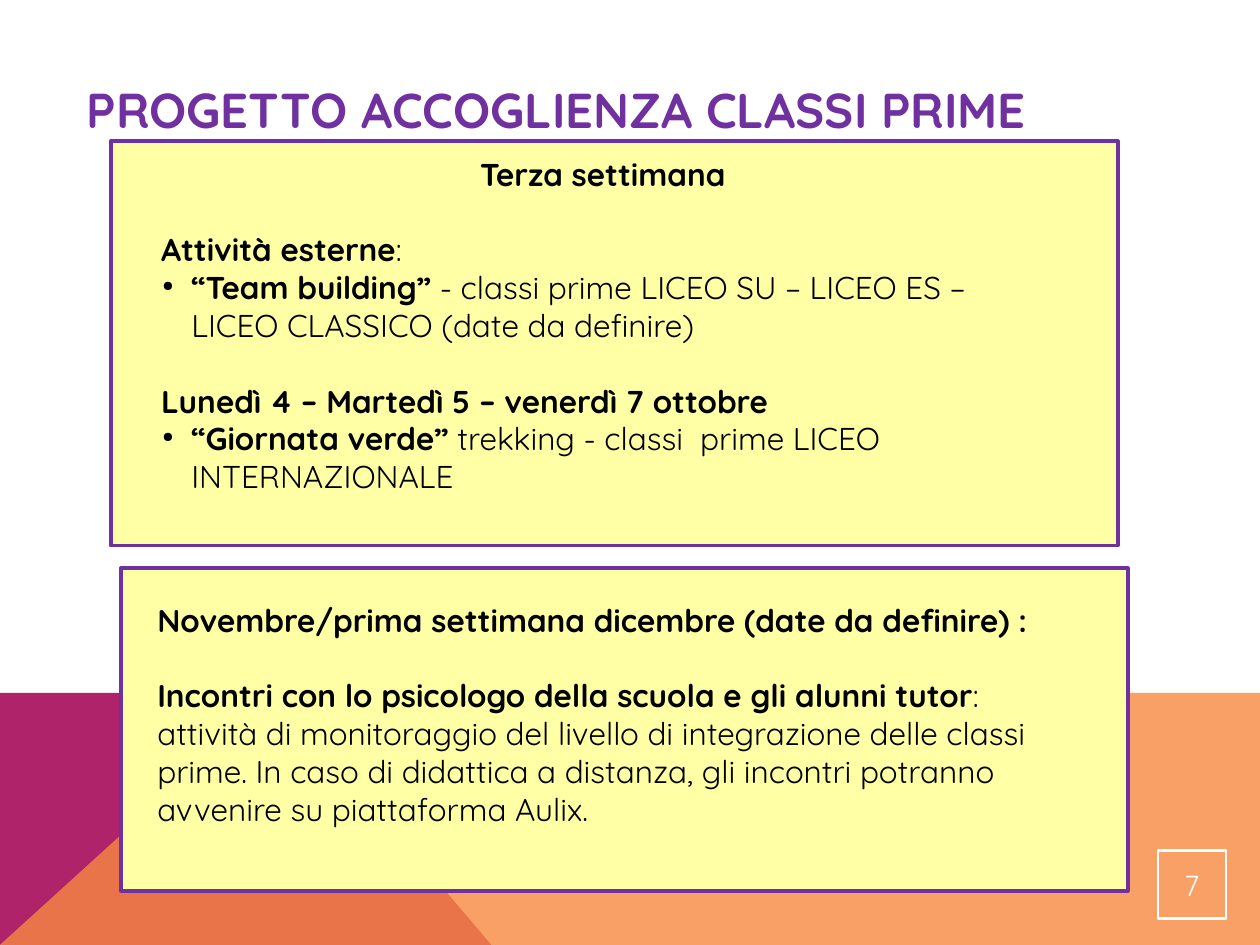
from pptx import Presentation
from pptx.dml.color import RGBColor
from pptx.enum.shapes import MSO_SHAPE
from pptx.enum.text import MSO_ANCHOR, MSO_AUTO_SIZE, PP_ALIGN
from pptx.oxml import parse_xml
from pptx.oxml.ns import nsdecls
from pptx.util import Inches, Pt

RECTANGLE = MSO_SHAPE.RECTANGLE
CENTER, LEFT = PP_ALIGN.CENTER, PP_ALIGN.LEFT
MIDDLE, TOP = MSO_ANCHOR.MIDDLE, MSO_ANCHOR.TOP
GROW, FIXED = MSO_AUTO_SIZE.SHAPE_TO_FIT_TEXT, MSO_AUTO_SIZE.NONE

FONT = "Quicksand"
PURPLE, YELLOW, WHITE, BLACK = "7030A0", "FFFFA6", "FFFFFF", "000000"
MAGENTA, ORANGE = "AE236A", "F88941"
COLUMNS, ROWS = 100, 75
CELL = Inches(10) // COLUMNS
BLANK_LINE = 21.6

THIRD_WEEK = [
    {"runs": [("Terza settimana ", True)], "align": CENTER},
    {"runs": [("Attività esterne", True), (":", False)], "gap": BLANK_LINE},
    {"runs": [("“Team building”", True),
              (" - classi prime LICEO SU – LICEO ES – LICEO CLASSICO (date da definire)", False)],
     "bullet": True},
    {"runs": [("Lunedì 4 – Martedì 5 – venerdì 7 ottobre", True)], "gap": BLANK_LINE},
    {"runs": [("“Giornata verde”", True),
              (" trekking - classi  prime LICEO INTERNAZIONALE", False)],
     "bullet": True},
]
NOVEMBER = [
    {"runs": [("Novembre/prima settimana dicembre (date da definire) :", True)]},
    {"runs": [("Incontri con lo psicologo della scuola e gli alunni tutor", True),
              (": attività di monitoraggio del livello di integrazione delle classi prime. "
               "In caso di didattica a distanza, gli incontri potranno avvenire su "
               "piattaforma Aulix.", False)],
     "gap": BLANK_LINE},
]


def rgb(value):
    """Return the colour of a hex string."""
    return RGBColor.from_string(value)


def grid(*cells):
    """Convert counts of grid cells to lengths."""
    return [round(cell * CELL) for cell in cells]


def set_all(target, values):
    """Set each attribute of target from a dict."""
    for name, value in values.items():
        setattr(target, name, value)


def add_bullet(paragraph):
    """Give a paragraph a small hanging bullet."""
    properties = paragraph._p.get_or_add_pPr()
    properties.set("marL", str(Inches(0.24)))
    properties.set("indent", str(-Inches(0.23)))
    for markup in (f'<a:buClr {nsdecls("a")}><a:srgbClr val="{BLACK}"/></a:buClr>',
                   f'<a:buSzPct {nsdecls("a")} val="45000"/>',
                   f'<a:buChar {nsdecls("a")} char="●"/>'):
        properties.append(parse_xml(markup))


def write(frame, paragraphs, size, color, insets=(1, 0.5), anchor=TOP, fit=FIXED):
    """Fill a text frame with paragraphs of plain and bold runs."""
    across, down = grid(*insets)
    set_all(frame, {"word_wrap": True, "auto_size": fit, "vertical_anchor": anchor,
                    "margin_left": across, "margin_right": across,
                    "margin_top": down, "margin_bottom": down})
    for index, content in enumerate(paragraphs):
        paragraph = frame.add_paragraph() if index else frame.paragraphs[0]
        set_all(paragraph, {"alignment": content.get("align", LEFT),
                            "space_before": Pt(content.get("gap", 0))})
        if content.get("bullet"):
            add_bullet(paragraph)
        for words, bold in content["runs"]:
            run = paragraph.add_run()
            run.text = words
            set_all(run.font, {"name": FONT, "size": Pt(size), "bold": bold})
            run.font.color.rgb = rgb(color)


def add_frame(slide, box, line, width, fill=None):
    """Draw an outlined rectangle, filled if a colour is given."""
    frame = slide.shapes.add_shape(RECTANGLE, *grid(*box))
    frame.shadow.inherit = False
    if fill:
        frame.fill.solid()
        frame.fill.fore_color.rgb = rgb(fill)
    else:
        frame.fill.background()
    frame.line.color.rgb = rgb(line)
    frame.line.width = Pt(width)
    return frame


def add_band(slide, points, fill, opacity=100):
    """Draw a borderless polygon through grid points."""
    builder = slide.shapes.build_freeform(*points[0], scale=CELL)
    builder.add_line_segments(points[1:], close=True)
    band = builder.convert_to_shape()
    band.shadow.inherit = False
    band.fill.solid()
    band.fill.fore_color.rgb = rgb(fill)
    band.line.fill.background()
    if opacity < 100:
        color = band.fill._xPr.solidFill.srgbClr
        color.append(parse_xml(f'<a:alpha {nsdecls("a")} val="{opacity * 1000}"/>'))


def add_footer(slide, box):
    """Draw the two overlapping bands across the foot of the slide."""
    left, top, width, height = box
    right, bottom = left + width, top + height
    peak, base = left + 0.223 * width, left + 0.39 * width
    add_band(slide, [(left, bottom), (left, top), (peak, top), (base, bottom)], MAGENTA)
    add_band(slide, [(left, bottom), (peak, top), (right, top), (right, bottom)], ORANGE, 80)


def add_page_number(slide, box, number):
    """Draw the framed page number."""
    frame = add_frame(slide, box, WHITE, 1.5)
    write(frame.text_frame, [{"runs": [(number, False)], "align": CENTER}],
          16.5, WHITE, insets=(0.1, 0.1), anchor=MIDDLE)


def add_title(slide, box, title):
    """Write the slide title."""
    heading = slide.shapes.add_textbox(*grid(*box))
    write(heading.text_frame, [{"runs": [(title, True)]}], 28, PURPLE, fit=GROW)


def add_panel(slide, box, text_box, paragraphs):
    """Draw a yellow panel with its text placed relative to it."""
    add_frame(slide, box, PURPLE, 2.25, YELLOW)
    across, down, width, height = text_box
    body = slide.shapes.add_textbox(*grid(box[0] + across, box[1] + down, width, height))
    write(body.text_frame, paragraphs, 18, BLACK)


def main():
    """Build the slide and save it."""
    deck = Presentation()
    set_all(deck, {"slide_width": COLUMNS * CELL, "slide_height": ROWS * CELL})
    slide = deck.slides.add_slide(deck.slide_layouts[6])
    add_footer(slide, (0, 55.2, 99.9, 19.7))
    add_page_number(slide, (91.9, 67.5, 5.4, 5.4), "7")
    add_panel(slide, (8.8, 11.2, 79.9, 32.1), (3, 0.6, 72.8, 28.1), THIRD_WEEK)
    add_title(slide, (5.9, 5.8, 88.5, 5.6), "PROGETTO ACCOGLIENZA CLASSI PRIME")
    add_panel(slide, (9.6, 45.1, 79.9, 25.6), (1.9, 2.1, 73.2, 21.6), NOVEMBER)
    deck.save("out.pptx")


if __name__ == "__main__":
    main()
